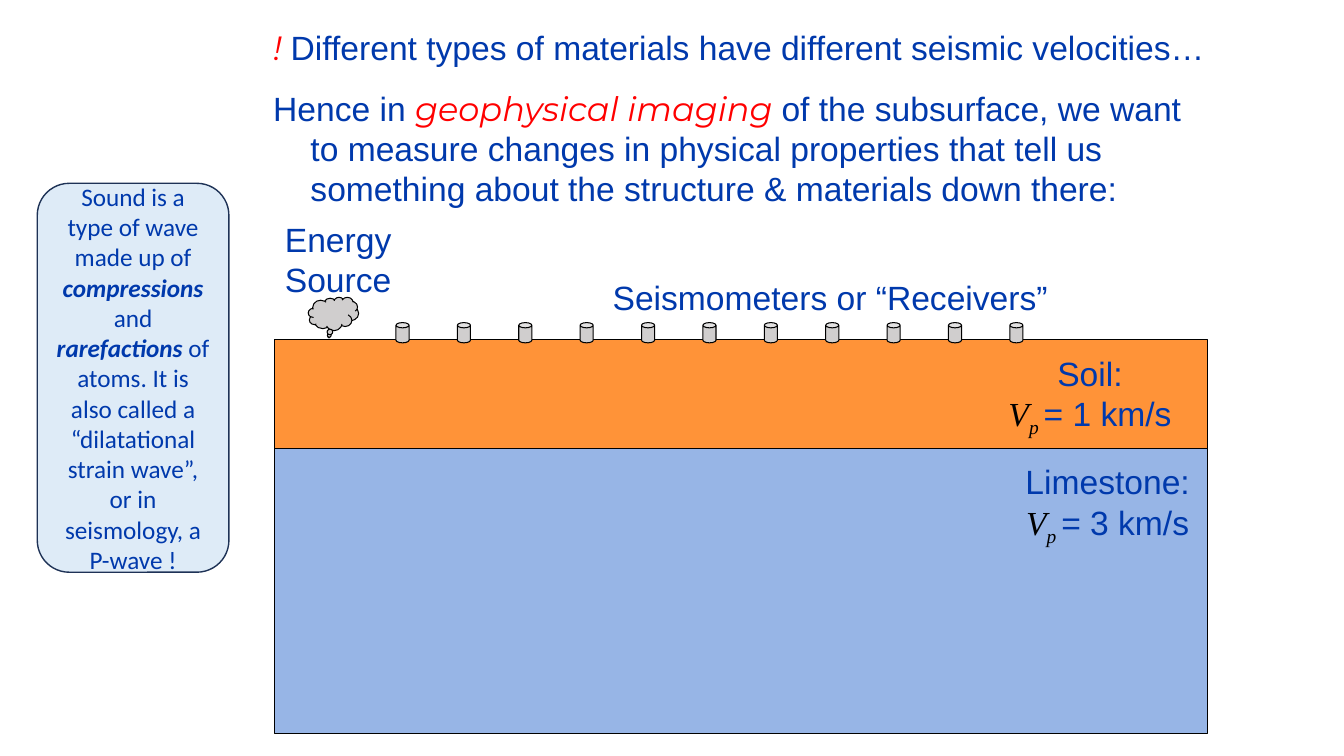
from pptx import Presentation
from pptx import util as u
from pptx.dml.color import RGBColor
from pptx.enum import shapes, text
from pptx.oxml.ns import qn
from lxml import etree

BLUE = RGBColor(0x00, 0x39, 0xAC)
RED = RGBColor(0xFF, 0x00, 0x00)
BLACK = RGBColor(0x00, 0x00, 0x00)
GREY = RGBColor(0xD0, 0xCE, 0xCE)
SOIL = RGBColor(0xFF, 0x93, 0x38)
LIMESTONE = RGBColor(0x97, 0xB5, 0xE6)
NOTE_FILL = RGBColor(0xDE, 0xEB, 0xF7)
NOTE_LINE = RGBColor(0x1E, 0x32, 0x56)

# Run styles: font, size, colour, bold, italic, baseline
STYLES = {
    "plain": ("Arial", 24, BLUE, False, False, 0),
    "accent": ("Montserrat", 24, RED, False, True, 0),
    "symbol": ("Times New Roman", 24, BLACK, False, True, 0),
    "subscript": ("Times New Roman", 24, BLACK, False, True, -25000),
    "note": ("Calibri", 18, BLUE, False, False, 0),
    "term": ("Calibri", 18, BLUE, True, True, 0),
}

# Content: each text is a list of paragraphs, each paragraph a list of runs
TITLE = [[("! ", "accent"),
          ("Different types of materials have different seismic velocities…", "plain")]]
BODY = [
    [("Hence in ", "plain"), ("geophysical imaging ", "accent"),
     ("of the subsurface, we want", "plain")],
    [("to measure changes in physical properties that tell us", "plain")],
    [("something about the structure & materials down there:", "plain")],
]
NOTE = [[
    ("Sound is a type of wave made up of ", "note"), ("compressions", "term"),
    (" and ", "note"), ("rarefactions ", "term"),
    ("of atoms. It is also called a “dilatational strain wave”, "
     "or in seismology, a P-wave !", "note"),
]]
ENERGY = [[("Energy", "plain")], [("Source", "plain")]]
RECEIVERS = [[("Seismometers or “Receivers”", "plain")]]

# Layers: name, velocity, fill, top, height, label left, label width (cm)
LAYERS = [
    ("Soil:", "= 1 km/s", SOIL, 8.56, 2.74, 25.07, 4.8),
    ("Limestone:", "= 3 km/s", LIMESTONE, 11.3, 7.19, 25.45, 4.93),
]
GROUND_LEFT, GROUND_WIDTH = 6.93, 23.5
RECEIVER_COUNT, RECEIVER_LEFT, RECEIVER_STEP = 11, 9.98, 1.547
LEFT, CENTER = text.PP_ALIGN.LEFT, text.PP_ALIGN.CENTER
TOP, MIDDLE = text.MSO_ANCHOR.TOP, text.MSO_ANCHOR.MIDDLE


def write(shape, paragraphs, align=LEFT, anchor=TOP, wrap=True):
    frame = shape.text_frame
    frame.auto_size = text.MSO_AUTO_SIZE.NONE
    frame.word_wrap = wrap
    frame.vertical_anchor = anchor
    for index, runs in enumerate(paragraphs):
        paragraph = frame.add_paragraph() if index else frame.paragraphs[0]
        paragraph.alignment = align
        paragraph.space_before = u.Pt(0)
        for words, style in runs:
            run = paragraph.add_run()
            run.text = words
            font = run.font
            font.name, size, color, font.bold, font.italic, baseline = STYLES[style]
            font.size = u.Pt(size)
            font.color.rgb = color
            if baseline:
                run._r.get_or_add_rPr().set("baseline", str(baseline))


def place(shape, left, top, width, height):
    shape.left, shape.top = u.Cm(left), u.Cm(top)
    shape.width, shape.height = u.Cm(width), u.Cm(height)


def add_figure(slide, kind, box, fill, line=BLACK, weight=0.75):
    shape = slide.shapes.add_shape(kind, *(u.Cm(length) for length in box))
    shape.shadow.inherit = False
    shape.fill.solid()
    shape.fill.fore_color.rgb = fill
    shape.line.color.rgb = line
    shape.line.width = u.Pt(weight)
    return shape


def add_label(slide, box, paragraphs, align=LEFT):
    label = slide.shapes.add_textbox(*(u.Cm(length) for length in box))
    write(label, paragraphs, align, wrap=False)


def main():
    presentation = Presentation()
    presentation.slide_width, presentation.slide_height = u.Cm(33.87), u.Cm(19.05)
    slide = presentation.slides.add_slide(presentation.slide_layouts[1])
    kinds = shapes.MSO_SHAPE

    # Title and introduction
    title, body = slide.placeholders
    place(title, 6.63, 0.56, 24.36, 1.3)
    write(title, TITLE)
    place(body, 6.63, 2.08, 24.36, 3.35)
    write(body, BODY)
    for index, paragraph in enumerate(body.text_frame.paragraphs):
        properties = paragraph._p.get_or_add_pPr()
        properties.set("marL", str(u.Cm(0.94 if index else 0)))
        properties.set("indent", "0")
        etree.SubElement(properties, qn("a:buNone"))

    # Ground layers with their velocities
    for name, velocity, fill, top, height, label_left, label_width in LAYERS:
        add_figure(slide, kinds.RECTANGLE,
                   (GROUND_LEFT, top, GROUND_WIDTH, height), fill)
        formula = [("V", "symbol"), ("p ", "subscript"), (velocity, "plain")]
        add_label(slide, (label_left, top + 0.2, label_width, 2.31),
                  [[(name, "plain")], formula], CENTER)

    # Energy source
    cloud = add_figure(slide, kinds.CLOUD_CALLOUT, (7.77, 7.49, 1.27, 0.84), GREY)
    cloud.adjustments[0], cloud.adjustments[1] = -0.09, 0.69
    add_label(slide, (GROUND_LEFT, 5.38, 3.23, 2.31), ENERGY)

    # Row of receivers
    for index in range(RECEIVER_COUNT):
        left = RECEIVER_LEFT + index * RECEIVER_STEP
        receiver = add_figure(slide, kinds.CAN, (left, 8.13, 0.33, 0.51), GREY)
        receiver.adjustments[0] = 0.4
    add_label(slide, (15.19, 6.86, 11.89, 1.27), RECEIVERS)

    # Side note
    note = add_figure(slide, kinds.ROUNDED_RECTANGLE, (0.94, 4.62, 4.83, 9.8),
                      NOTE_FILL, NOTE_LINE, 1)
    write(note, NOTE, CENTER, MIDDLE)

    presentation.save("out.pptx")


if __name__ == "__main__":
    main()
